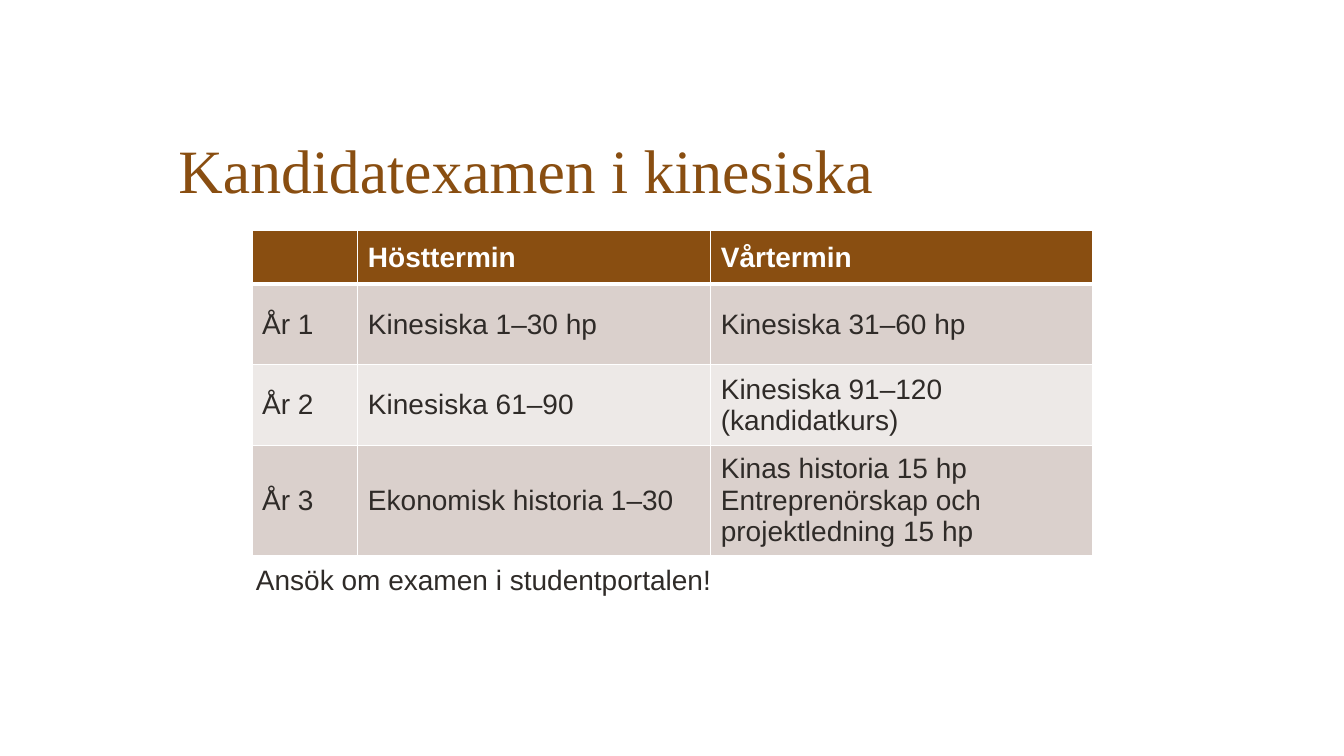
from lxml import etree
from pptx import Presentation
from pptx.dml.color import RGBColor
from pptx.enum.text import MSO_ANCHOR, MSO_AUTO_SIZE, PP_ALIGN
from pptx.oxml.ns import qn
from pptx.util import Inches, Pt

LEFT = PP_ALIGN.LEFT
MIDDLE = MSO_ANCHOR.MIDDLE
BOTTOM = MSO_ANCHOR.BOTTOM
GROW = MSO_AUTO_SIZE.SHAPE_TO_FIT_TEXT

BROWN = RGBColor(0x89, 0x4E, 0x11)
WHITE = RGBColor(0xFF, 0xFF, 0xFF)
INK = RGBColor(0x2F, 0x2B, 0x28)
DARK = RGBColor(0xDA, 0xD0, 0xCC)
LIGHT = RGBColor(0xED, 0xE9, 0xE7)

WIDE, HIGH = Inches(13.33), Inches(7.5)
COLS = [1.05, 3.5, 3.79]
ROWS = [0.53, 0.8, 0.8, 1.09]
TERMS = [
    ["", "Hösttermin", "Vårtermin"],
    ["År 1", "Kinesiska 1–30 hp", "Kinesiska 31–60 hp"],
    ["År 2", "Kinesiska 61–90", "Kinesiska 91–120 (kandidatkurs)"],
    ["År 3", "Ekonomisk historia 1–30",
     "Kinas historia 15 hp\vEntreprenörskap och projektledning 15 hp"],
]


def style(para, name, size, color, bold=False):
    para.alignment = LEFT
    font = para.font
    font.name, font.size, font.bold = name, Pt(size), bold
    font.color.rgb = color


def place(left, top, width, height):
    return (round(WIDE * left), round(HIGH * top),
            round(WIDE * width), round(HIGH * height))


def add_title(slide, text, box):
    title = slide.shapes.title
    title.left, title.top, title.width, title.height = box
    frame = title.text_frame
    frame.text = text
    frame.word_wrap = True
    frame.vertical_anchor = BOTTOM
    frame.margin_left = frame.margin_top = frame.margin_right = 0
    frame.margin_bottom = Inches(0.31)
    para = frame.paragraphs[0]
    para.line_spacing = 0.9
    style(para, "Times New Roman", 44, BROWN)


def add_edge(cell, side, width):
    props = cell._tc.get_or_add_tcPr()
    line = etree.SubElement(props, qn("a:ln" + side), w=str(Pt(width)))
    fill = etree.SubElement(line, qn("a:solidFill"))
    etree.SubElement(fill, qn("a:srgbClr"), val=str(WHITE))


def fill_cell(cell, text, row):
    head = row == 0
    edges = {"L": 1, "R": 1, "T": 3 if row == 1 else 1, "B": 3 if head else 1}
    for side, width in edges.items():
        add_edge(cell, side, width)
    cell.fill.solid()
    cell.fill.fore_color.rgb = BROWN if head else DARK if row % 2 else LIGHT
    cell.vertical_anchor = MIDDLE
    para = cell.text_frame.paragraphs[0]
    para.text = text
    style(para, "Arial", 20, WHITE if head else INK, head)


def add_grid(slide, left, top):
    table = slide.shapes.add_table(
        len(ROWS), len(COLS), round(WIDE * left), round(HIGH * top),
        Inches(sum(COLS)), Inches(sum(ROWS))).table
    for col, width in zip(table.columns, COLS):
        col.width = Inches(width)
    for row, height in zip(table.rows, ROWS):
        row.height = Inches(height)
    for row, texts in enumerate(TERMS):
        for col, text in enumerate(texts):
            fill_cell(table.cell(row, col), text, row)


def add_note(slide, text, box):
    frame = slide.shapes.add_textbox(*box).text_frame
    frame.word_wrap = True
    frame.auto_size = GROW
    frame.text = text
    style(frame.paragraphs[0], "Arial", 20, INK)


def main():
    deck = Presentation()
    deck.slide_width, deck.slide_height = WIDE, HIGH
    slide = deck.slides.add_slide(deck.slide_layouts[5])
    add_title(slide, "Kandidatexamen i kinesiska",
              place(0.1328, 0.052, 0.7239, 0.2627))
    add_grid(slide, 0.1875, 0.3053)
    add_note(slide, "Ansök om examen i studentportalen!",
             place(0.183, 0.7373, 0.4779, 0.0587))
    deck.save("out.pptx")


if __name__ == "__main__":
    main()
